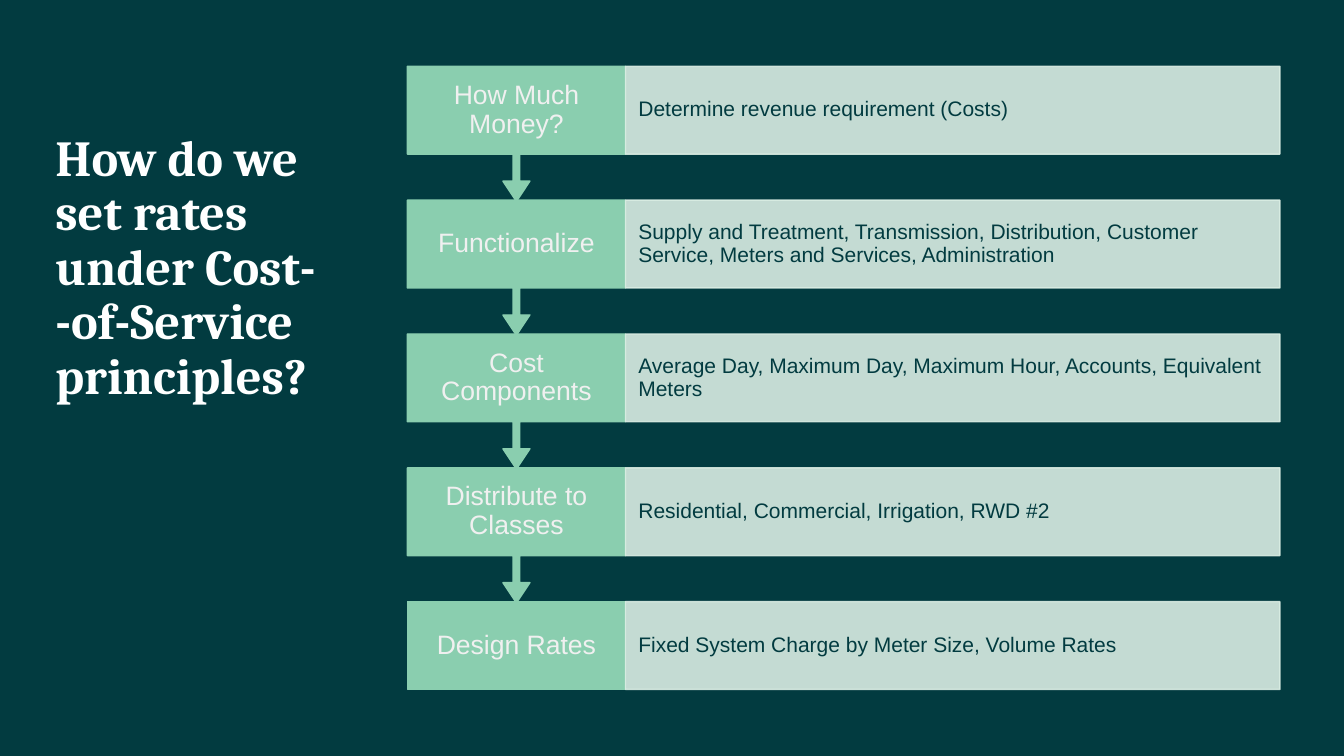
from lxml.etree import SubElement
from pptx import Presentation
from pptx.dml.color import RGBColor
from pptx.enum.shapes import MSO_SHAPE
from pptx.enum.text import MSO_ANCHOR, PP_ALIGN
from pptx.oxml.ns import qn
from pptx.util import Pt

THEME = {
    "background": RGBColor.from_string("023B40"),
    "title": RGBColor.from_string("FEFFFF"),
    "step": RGBColor.from_string("8ACEAF"),
    "step_text": RGBColor.from_string("F0F0F0"),
    "detail": RGBColor.from_string("DAEDE3"),
    "detail_text": RGBColor.from_string("023B40"),
    "title_font": "Cambria",
    "body_font": "Arial",
    "title_size": Pt(36),
    "step_size": Pt(19),
    "detail_size": Pt(15),
}

STEPS = [
    ("How Much Money?", "Determine revenue requirement (Costs)"),
    ("Functionalize", "Supply and Treatment, Transmission, Distribution, Customer Service, "
                      "Meters and Services, Administration"),
    ("Cost Components", "Average Day, Maximum Day, Maximum Hour, Accounts, Equivalent Meters"),
    ("Distribute to Classes", "Residential, Commercial, Irrigation, RWD #2"),
    ("Design Rates", "Fixed System Charge by Meter Size, Volume Rates"),
]


def write_text(shape, text, font, size, color, margins, bold=False,
               align=PP_ALIGN.LEFT, anchor=MSO_ANCHOR.MIDDLE):
    frame = shape.text_frame
    frame.word_wrap = True
    frame.vertical_anchor = anchor
    (frame.margin_left, frame.margin_top,
     frame.margin_right, frame.margin_bottom) = [Pt(margin) for margin in margins]
    paragraph = frame.paragraphs[0]
    paragraph.alignment = align
    paragraph.line_spacing = 0.9
    run = paragraph.add_run()
    run.text = text
    run.font.name = font
    run.font.size = size
    run.font.bold = bold
    run.font.color.rgb = color


def add_block(kind, left, top, width, height, color, opacity=100):
    shape = slide.shapes.add_shape(kind, Pt(left), Pt(top), Pt(width), Pt(height))
    shape.shadow.inherit = False
    shape.fill.solid()
    shape.fill.fore_color.rgb = color
    shape.line.color.rgb = color
    shape.line.width = Pt(1)
    if opacity < 100:
        for color_element in shape._element.spPr.iter(qn("a:srgbClr")):
            SubElement(color_element, qn("a:alpha"), val=str(opacity * 1000))
    return shape


presentation = Presentation()
presentation.slide_width = Pt(960)
presentation.slide_height = Pt(540)
slide = presentation.slides.add_slide(presentation.slide_layouts[6])
slide.background.fill.solid()
slide.background.fill.fore_color.rgb = THEME["background"]

title = slide.shapes.add_textbox(Pt(39.6), Pt(80), Pt(219), Pt(216))
write_text(title, "How do we set rates under Cost- -of-Service principles?",
           THEME["title_font"], THEME["title_size"], THEME["title"],
           (0, 15, 0, 0), bold=True, anchor=MSO_ANCHOR.TOP)

first_top, pitch = 47.4, 95.6
step_left, step_width = 291, 155.8
detail_left, detail_width = step_left + step_width, 467.5
row_height, callout_height = 62.7, 96.5
last = len(STEPS) - 1

for index, (step_name, detail_text) in reversed(list(enumerate(STEPS))):
    top = first_top + index * pitch
    if index == last:
        step = add_block(MSO_SHAPE.RECTANGLE, step_left, top, step_width, row_height,
                         THEME["step"])
    else:
        step = add_block(MSO_SHAPE.DOWN_ARROW_CALLOUT, step_left, top, step_width,
                         callout_height, THEME["step"])
        for position, value in enumerate((0.05, 0.1, 0.15, 0.65)):
            step.adjustments[position] = value
    write_text(step, step_name, THEME["body_font"], THEME["step_size"],
               THEME["step_text"], (11, 11, 11, 11), align=PP_ALIGN.CENTER)

    detail = add_block(MSO_SHAPE.RECTANGLE, detail_left, top, detail_width, row_height,
                       THEME["detail"], opacity=90)
    write_text(detail, detail_text, THEME["body_font"], THEME["detail_size"],
               THEME["detail_text"], (9.2, 15, 9.2, 15))

presentation.save("out.pptx")
